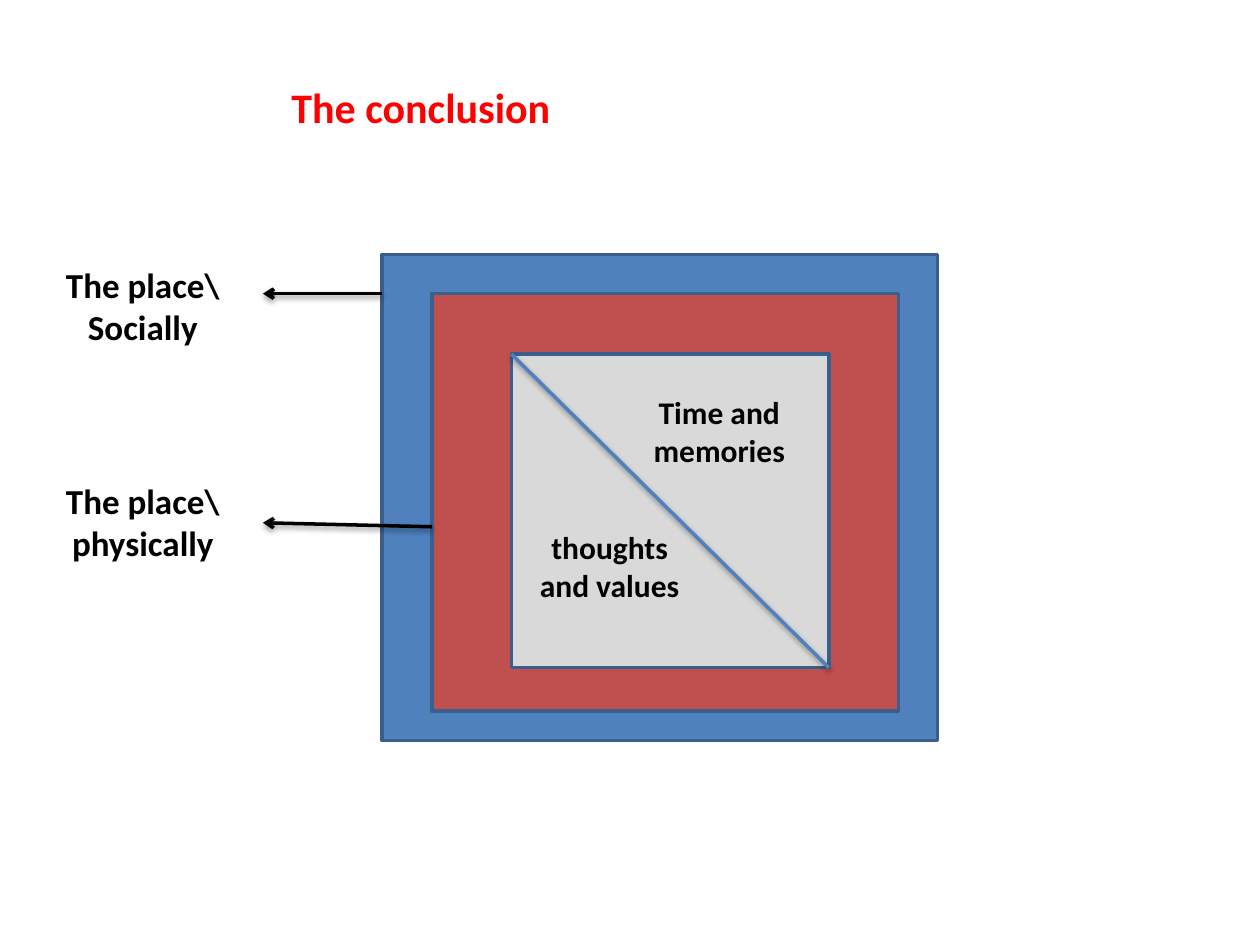
from typing import NamedTuple

from lxml import etree
from pptx import Presentation, util as u
from pptx.dml.color import RGBColor
from pptx.enum import shapes as sh, text as tx
from pptx.oxml import ns

FONT = "Calibri"
BLACK, RED, BLUE, EDGE = "000000", "FF0000", "4F81BD", "3A5F8C"


class Label(NamedTuple):
    words: str
    left: float
    top: float
    width: float
    height: float
    size: int
    color: str = BLACK


class Square(NamedTuple):
    left: float
    top: float
    width: float
    height: float
    fill: str


class Line(NamedTuple):
    x1: float
    y1: float
    x2: float
    y2: float
    color: str = BLACK
    arrow: bool = True


def paint(item, code: str) -> None:
    """Give a fill, line or font colour object a hex colour."""
    item.rgb = RGBColor.from_string(code)


def add_label(slide, label: Label) -> None:
    box = slide.shapes.add_textbox(*map(u.Cm, label[1:5]))
    frame = box.text_frame
    frame.word_wrap = True
    frame.auto_size = tx.MSO_AUTO_SIZE.SHAPE_TO_FIT_TEXT
    para = frame.paragraphs[0]
    para.alignment = tx.PP_ALIGN.CENTER
    para._p.get_or_add_pPr().set("rtl", "1")
    run = para.add_run()
    run.text = label.words
    run.font.name, run.font.size, run.font.bold = FONT, u.Pt(label.size), True
    paint(run.font.color, label.color)


def add_square(slide, square: Square) -> None:
    rect = slide.shapes.add_shape(sh.MSO_SHAPE.RECTANGLE, *map(u.Cm, square[:4]))
    rect.shadow.inherit = False
    rect.fill.solid()
    paint(rect.fill.fore_color, square.fill)
    rect.line.width = u.Pt(2)
    paint(rect.line.color, EDGE)


def add_line(slide, line: Line) -> None:
    link = slide.shapes.add_connector(sh.MSO_CONNECTOR.STRAIGHT, *map(u.Cm, line[:4]))
    link.line.width = u.Pt(2)
    paint(link.line.color, line.color)
    if line.arrow:
        etree.SubElement(link.line._get_or_add_ln(), ns.qn("a:tailEnd"), type="arrow")
    # Soft shadow straight below the line
    fx = etree.SubElement(link._element.spPr, ns.qn("a:effectLst"))
    cast = etree.SubElement(fx, ns.qn("a:outerShdw"), blurRad="40000", dist="20000",
                            dir="5400000", rotWithShape="0")
    tint = etree.SubElement(cast, ns.qn("a:srgbClr"), val=BLACK)
    etree.SubElement(tint, ns.qn("a:alpha"), val="38000")


SQUARES = [
    Square(7.7, 5.13, 11.2, 9.8, BLUE),
    Square(8.71, 5.92, 9.4, 8.41, "C0504D"),
    Square(10.31, 7.14, 6.4, 6.32, "D9D9D9"),
]
OUTER, MIDDLE, INNER = SQUARES

LINES = [
    Line(INNER.left, INNER.top, INNER.left + INNER.width, INNER.top + INNER.height,
         BLUE, False),
    Line(OUTER.left, MIDDLE.top, 5.3, MIDDLE.top),
    Line(MIDDLE.left, 10.62, 5.3, 10.54),
]

LABELS = [
    Label("The conclusion", 4.09, 1.52, 8.79, 1.27, 24, RED),
    Label("Time and memories", 12.9, 7.8, 3.2, 1.8, 18),
    Label("thoughts and values", INNER.left, 10.52, 3.96, 1.8, 18),
    Label("The place\\ physically", 0.48, 9.55, 4.8, 1.96, 20),
    Label("The place\\ Socially", 0.48, 5.18, 4.8, 1.96, 20),
]


def main() -> None:
    deck = Presentation()
    deck.slide_width, deck.slide_height = u.Cm(25.4), u.Cm(19.05)
    slide = deck.slides.add_slide(deck.slide_layouts[6])

    # Nested squares, then the diagonal and arrows, then the wording
    for square in SQUARES:
        add_square(slide, square)
    for line in LINES:
        add_line(slide, line)
    for label in LABELS:
        add_label(slide, label)

    deck.save("out.pptx")


if __name__ == "__main__":
    main()
